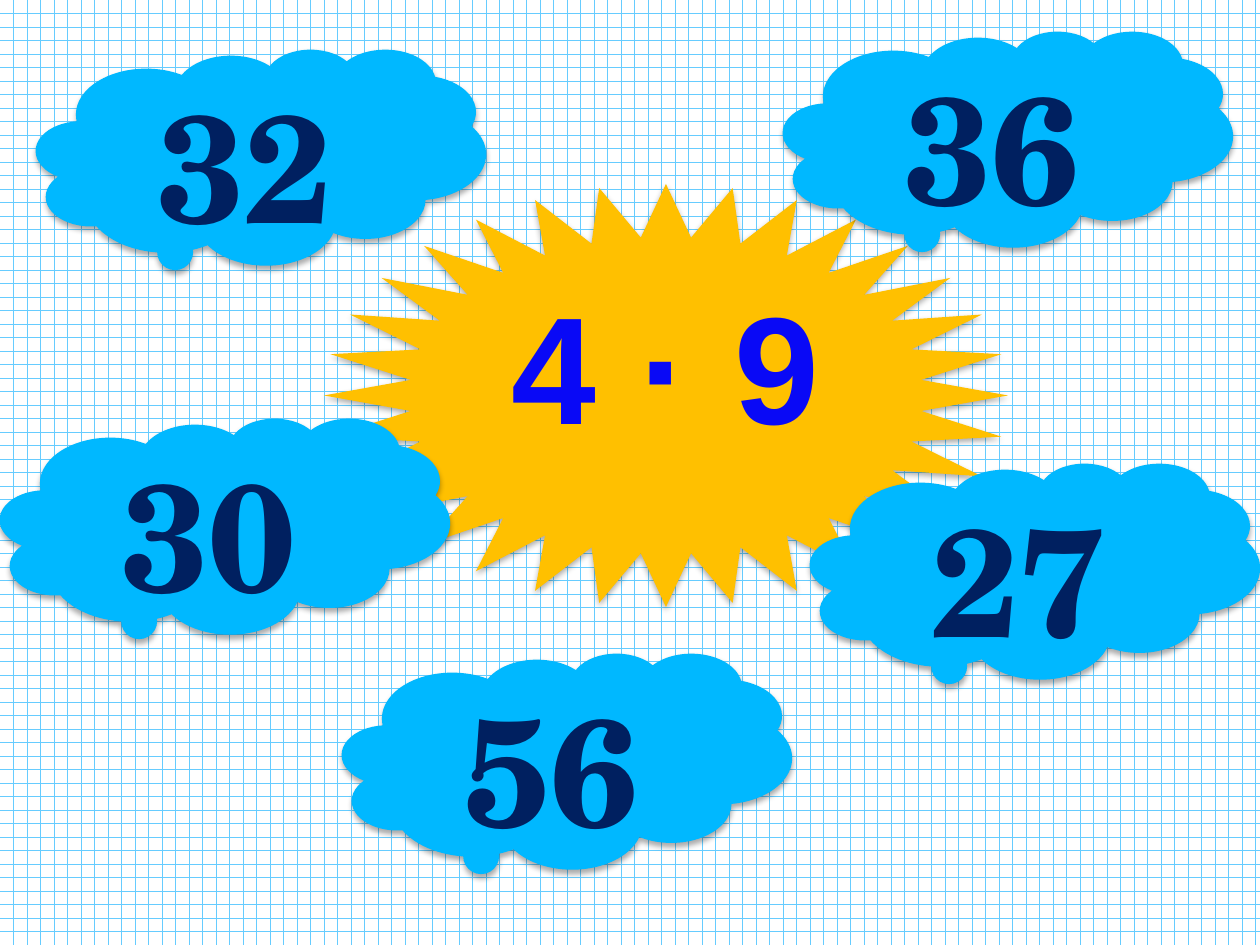
"""Build a multiplication quiz slide: a sun with the task and clouds with answers."""
from lxml.etree import SubElement
from pptx import Presentation
from pptx.dml.color import RGBColor
from pptx.enum.dml import MSO_PATTERN
from pptx.enum.shapes import MSO_SHAPE as Preset
from pptx.enum.text import MSO_ANCHOR as Anchor, PP_ALIGN as Align
from pptx.oxml.ns import qn
from pptx.util import Pt

PX = 8000
WHITE = RGBColor(0xFF, 0xFF, 0xFF)
GRID_BLUE = RGBColor(0x66, 0xCC, 0xFF)
SUN_YELLOW = RGBColor(0xFF, 0xC0, 0x00)
CLOUD_BLUE = RGBColor(0x00, 0xB8, 0xFF)
NAVY = RGBColor(0x00, 0x20, 0x60)
BRIGHT_BLUE = RGBColor(0x09, 0x09, 0xF6)
DEEP_BLUE = RGBColor(0x01, 0x01, 0xB3)


def add_soft_shadow(shape):
    shape.shadow.inherit = False
    effects = shape._element.spPr.find(qn("a:effectLst"))
    shadow = SubElement(effects, qn("a:outerShdw"), blurRad=str(Pt(3.5)),
                        dist=str(Pt(2.2)), dir="5400000", rotWithShape="0")
    black = SubElement(shadow, qn("a:srgbClr"), val="000000")
    SubElement(black, qn("a:alpha"), val="32000")


def add_figure(page, preset, box, color, text, font_name):
    shape = page.shapes.add_shape(preset, *[length * PX for length in box])
    shape.fill.solid()
    shape.fill.fore_color.rgb = color
    shape.line.fill.background()
    add_soft_shadow(shape)
    frame = shape.text_frame
    frame.word_wrap = True
    frame.vertical_anchor = Anchor.TOP
    para = frame.paragraphs[0]
    para.alignment = Align.CENTER
    para.line_spacing = 0.93
    span = para.add_run()
    span.text = text
    span.font.name = font_name
    span.font.size = Pt(96)
    span.font.bold = True
    return shape, span


deck = Presentation()
deck.slide_width, deck.slide_height = 1260 * PX, 945 * PX
page = deck.slides.add_slide(deck.slide_layouts[6])

grid = page.background.fill
grid.patterned()
grid.pattern = MSO_PATTERN.HORIZONTAL_BRICK
grid.fore_color.rgb = GRID_BLUE
grid.back_color.rgb = WHITE

sun, task = add_figure(page, Preset.STAR_32_POINT, (324, 184, 684, 423),
                       SUN_YELLOW, "4 · 9 ", "Arial")
task.font._element.set("spc", "50")
task.font.fill.gradient()
task.font.fill.gradient_angle = 270
first_stop, last_stop = task.font.fill.gradient_stops
first_stop.color.rgb, first_stop.position = BRIGHT_BLUE, 0.25
last_stop.color.rgb, last_stop.position = DEEP_BLUE, 1.0

ANSWERS = [("32", 36, 49), ("36", 783, 31), ("30", 0, 418),
           ("27", 810, 463), ("56", 342, 653)]
for number, left, top in ANSWERS:
    cloud, answer = add_figure(page, Preset.CLOUD_CALLOUT, (left, top, 450, 216),
                               CLOUD_BLUE, number, "TeX Gyre Schola")
    cloud.adjustments[0] = -0.157
    cloud.adjustments[1] = 0.363
    answer.font.color.rgb = NAVY

deck.save("out.pptx")
